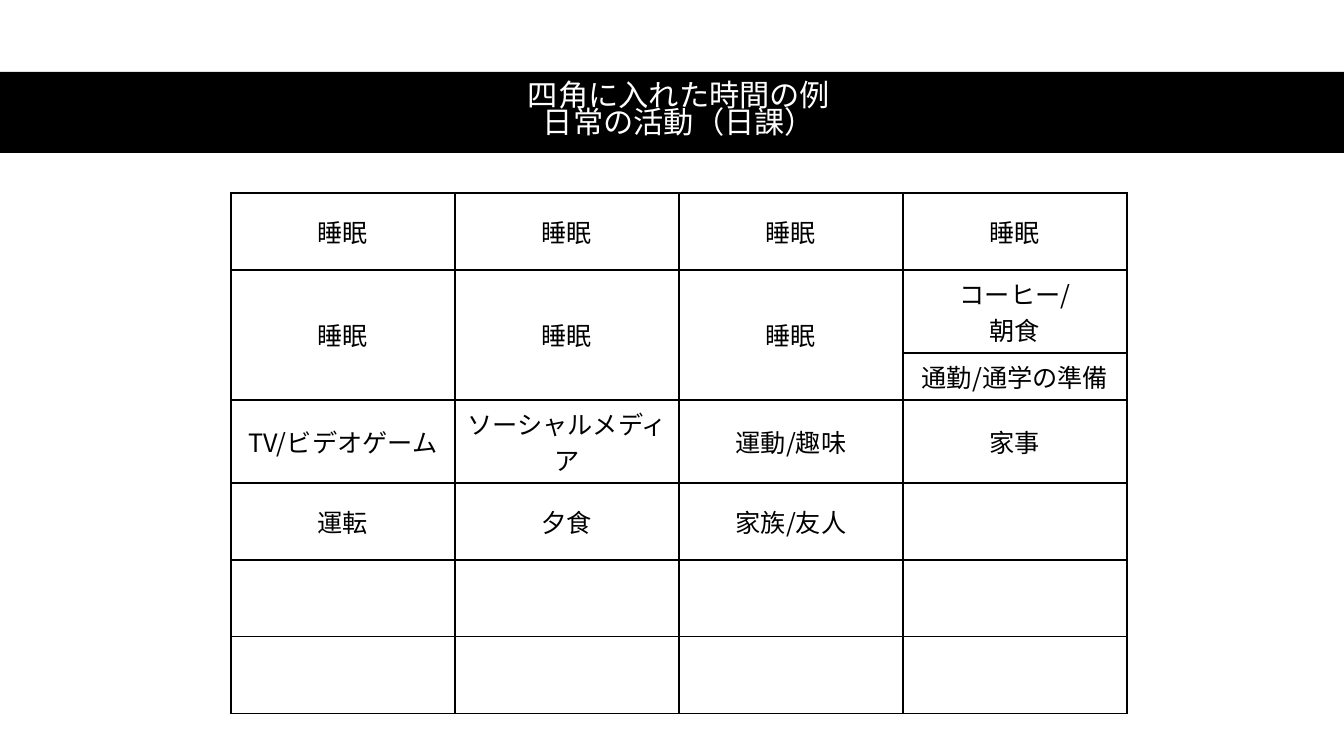
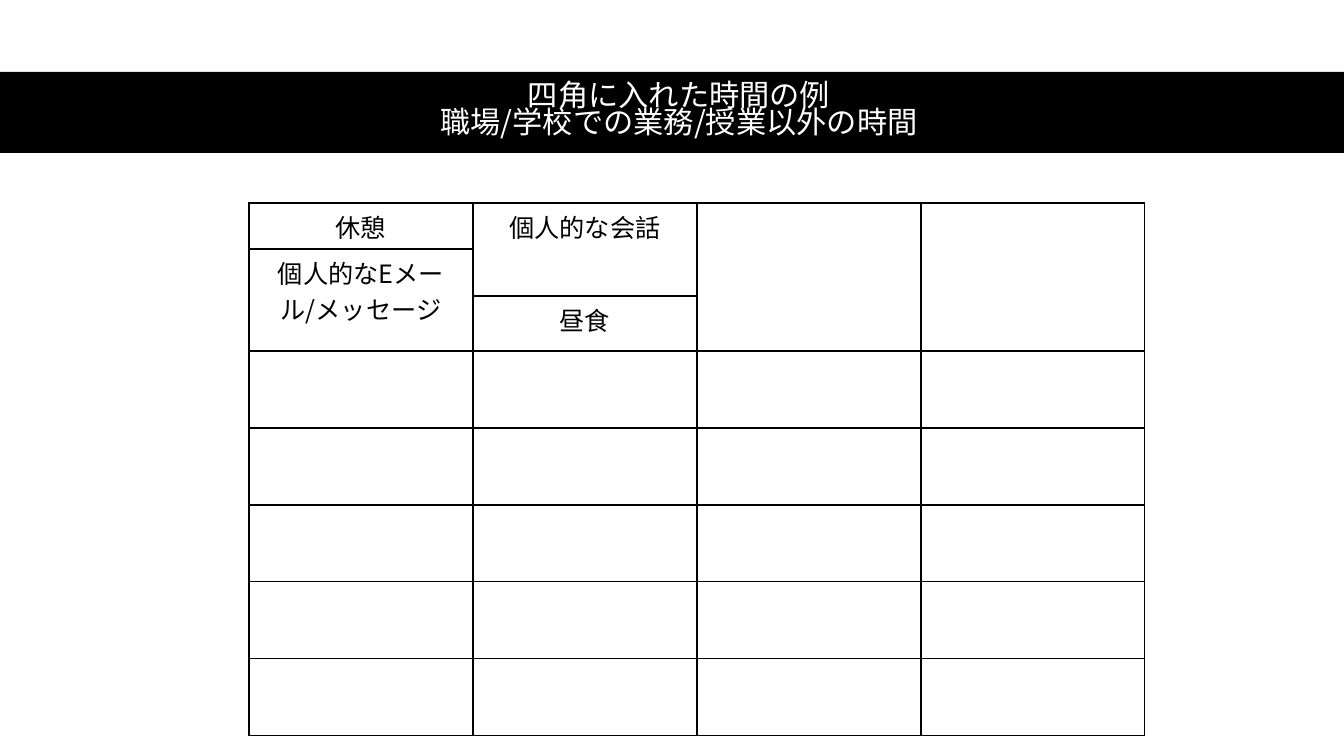
import pptx
import pptx.util
import pptx.dml.color
import pptx.enum.shapes
import pptx.enum.text
import pptx.oxml
import pptx.oxml.ns
import lxml.etree

PX = 12192000 / 1344
WIDTH, HEIGHT = 1344, 756
FONT = "Noto Sans CJK JP"
COLORS = {"paper": "FFFFFF", "ink": "000000"}
TITLE_SIZE, CELL_SIZE = 21.6, 18
BAND = (0, 72, WIDTH, 81)
COL_W, COLS = 224, 4
MIDDLE = pptx.enum.text.MSO_ANCHOR.MIDDLE
TOP = pptx.enum.text.MSO_ANCHOR.TOP


def px(n):
    return pptx.util.Emu(round(n * PX))


def rgb(name):
    return pptx.dml.color.RGBColor.from_string(COLORS[name])


def write(tf, text, size, color, spacing=None):
    p = tf.paragraphs[0]
    p.alignment = pptx.enum.text.PP_ALIGN.CENTER
    if spacing:
        p.line_spacing = spacing
    for i, line in enumerate(text.split("\n")):
        if i:
            p.add_line_break()
        r = p.add_run()
        r.text = line
        r.font.name = FONT
        r.font.size = pptx.util.Pt(size)
        r.font.color.rgb = rgb(color)
        ea = lxml.etree.SubElement(r.font._element, pptx.oxml.ns.qn("a:ea"))
        ea.set("typeface", FONT)


def add_title(slide, box, text):
    x, y, w, h = box
    sp = slide.shapes.add_shape(pptx.enum.shapes.MSO_SHAPE.RECTANGLE, px(x), px(y), px(w), px(h))
    sp.shadow.inherit = False
    sp.fill.solid()
    sp.fill.fore_color.rgb = rgb("ink")
    sp.line.fill.background()
    tb = slide.shapes.add_textbox(px(x + 61), px(y - 1), px(w - 108), px(h))
    tf = tb.text_frame
    tf.word_wrap = True
    tf.vertical_anchor = MIDDLE
    write(tf, text, TITLE_SIZE, "paper", 0.75)


def add_borders(cell):
    tc_pr = cell._tc.get_or_add_tcPr()
    for side in ("L", "R", "T", "B"):
        tc_pr.append(pptx.oxml.parse_xml(
            f'<a:ln{side} {pptx.oxml.ns.nsdecls("a")} w="12700"><a:solidFill>'
            f'<a:srgbClr val="{COLORS["ink"]}"/></a:solidFill></a:ln{side}>'))


def add_schedule(slide, origin, heights, texts, merges, anchor):
    x, y = origin
    table = slide.shapes.add_table(
        len(heights), COLS, px(x), px(y), px(COL_W * COLS), px(sum(heights))).table
    table.first_row = False
    table.horz_banding = False
    for col in table.columns:
        col.width = px(COL_W)
    for row, height in zip(table.rows, heights):
        row.height = px(height)
    for cell in table.iter_cells():
        add_borders(cell)
        cell.fill.background()
        cell.vertical_anchor = anchor
    for top, bottom, col in merges:
        table.cell(top, col).merge(table.cell(bottom, col))
    for r, row in enumerate(texts):
        for c, text in enumerate(row):
            if text:
                write(table.cell(r, c).text_frame, text, CELL_SIZE, "ink")


SLIDES = [
    {
        "title": "四角に入れた時間の例\n日常の活動（日課）",
        "origin": (231, 193),
        "heights": [77, 83, 47, 83] + [77] * 3,
        "texts": [
            ["睡眠"] * 4,
            ["睡眠"] * 3 + ["コーヒー/\n朝食"],
            ["", "", "", "通勤/通学の準備"],
            ["TV/ビデオゲーム", "ソーシャルメディア", "運動/趣味", "家事"],
            ["運転", "夕食", "家族/友人"],
        ],
        "merges": [(1, 2, c) for c in range(3)],
        "anchor": MIDDLE,
    },
    {
        "title": "四角に入れた時間の例\n職場/学校での業務/授業以外の時間",
        "origin": (249, 203),
        "heights": [46, 47, 55] + [77] * 5,
        "texts": [
            ["休憩", "個人的な会話"],
            ["個人的なEメール/メッセージ"],
            ["", "昼食"],
        ],
        "merges": [(1, 2, 0), (0, 1, 1), (0, 2, 2), (0, 2, 3)],
        "anchor": TOP,
    },
]


def main():
    prs = pptx.Presentation()
    prs.slide_width, prs.slide_height = px(WIDTH), px(HEIGHT)
    for page in SLIDES:
        slide = prs.slides.add_slide(prs.slide_layouts[6])
        add_title(slide, BAND, page["title"])
        add_schedule(slide, page["origin"], page["heights"], page["texts"],
                     page["merges"], page["anchor"])
    prs.save("out.pptx")


if __name__ == "__main__":
    main()
